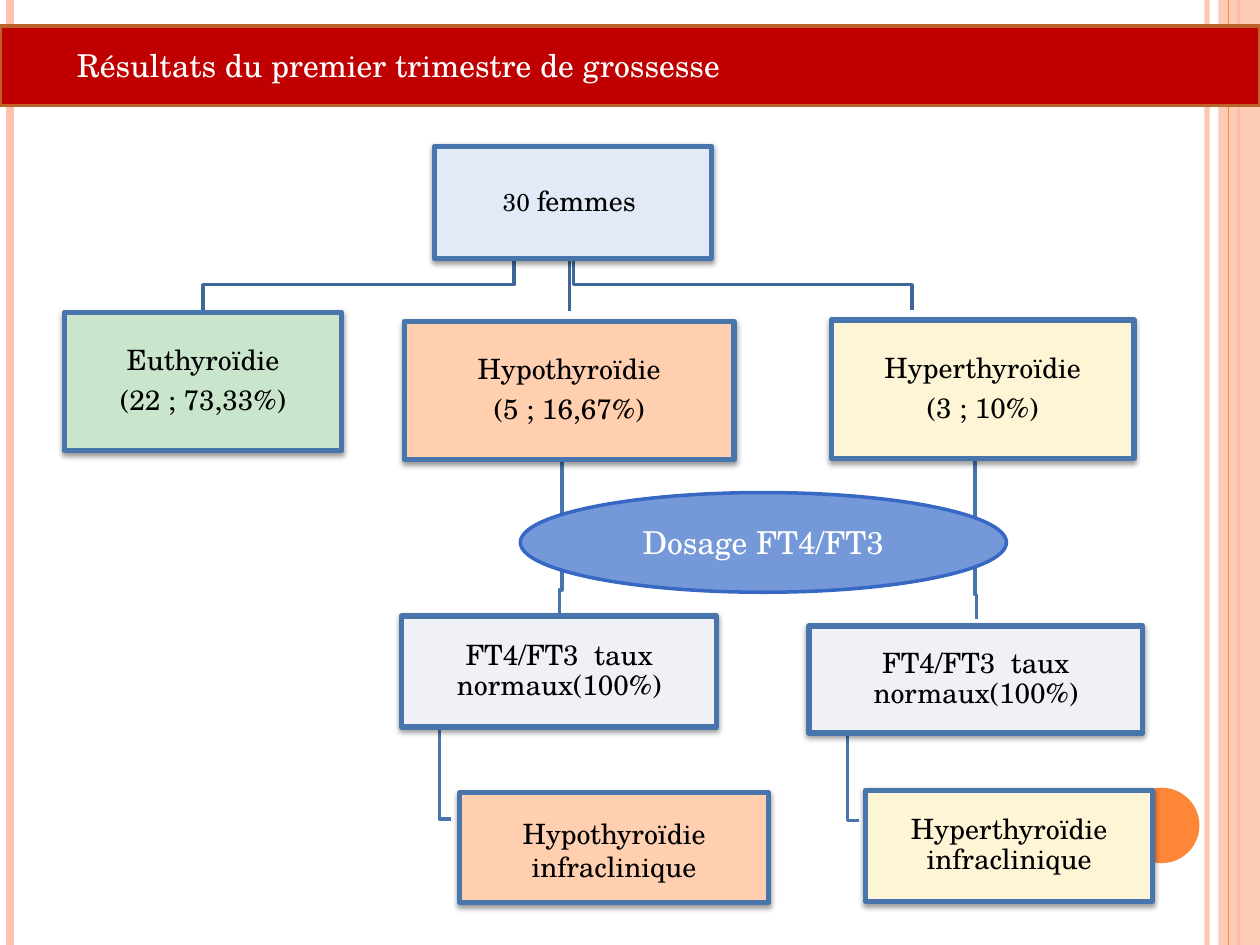
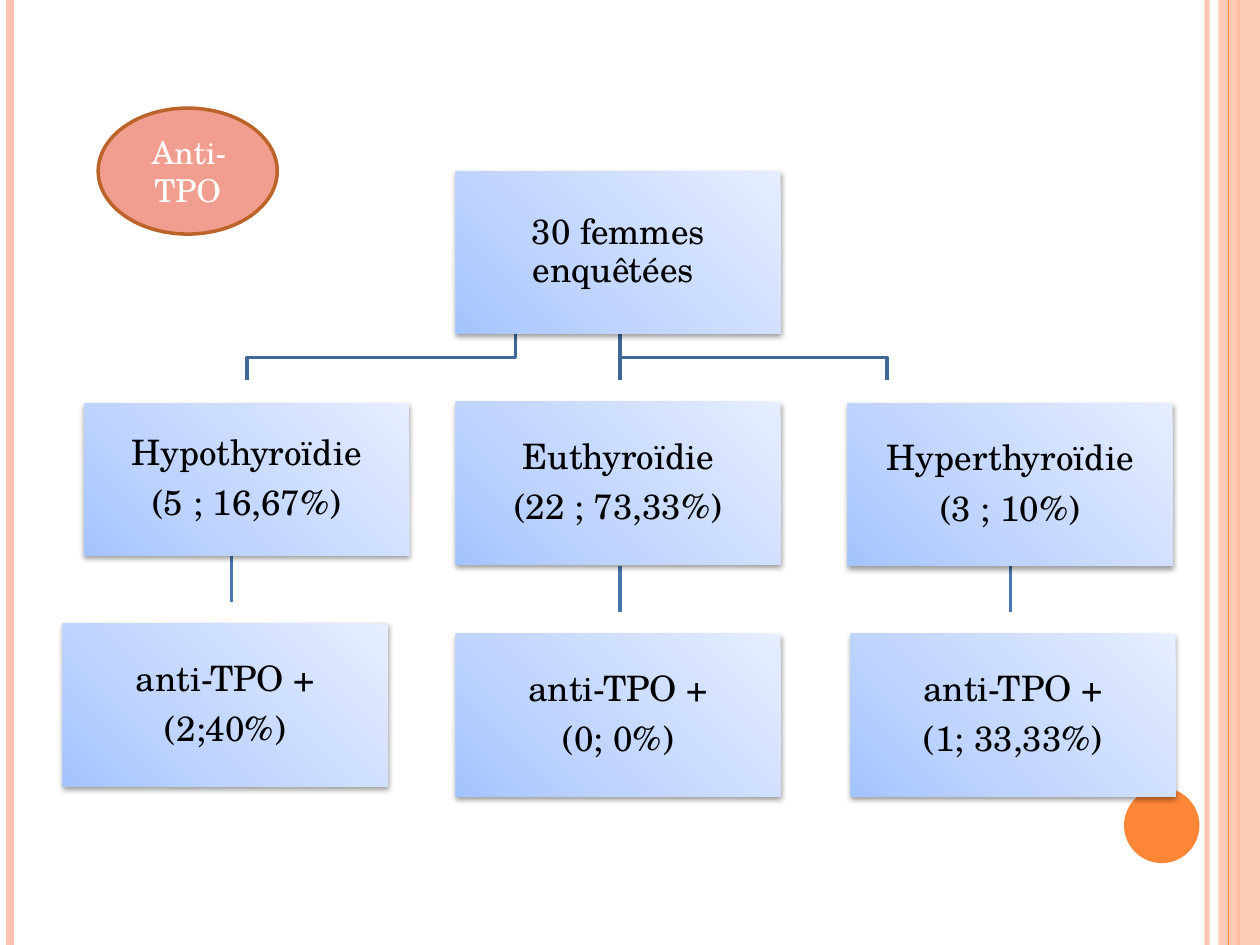
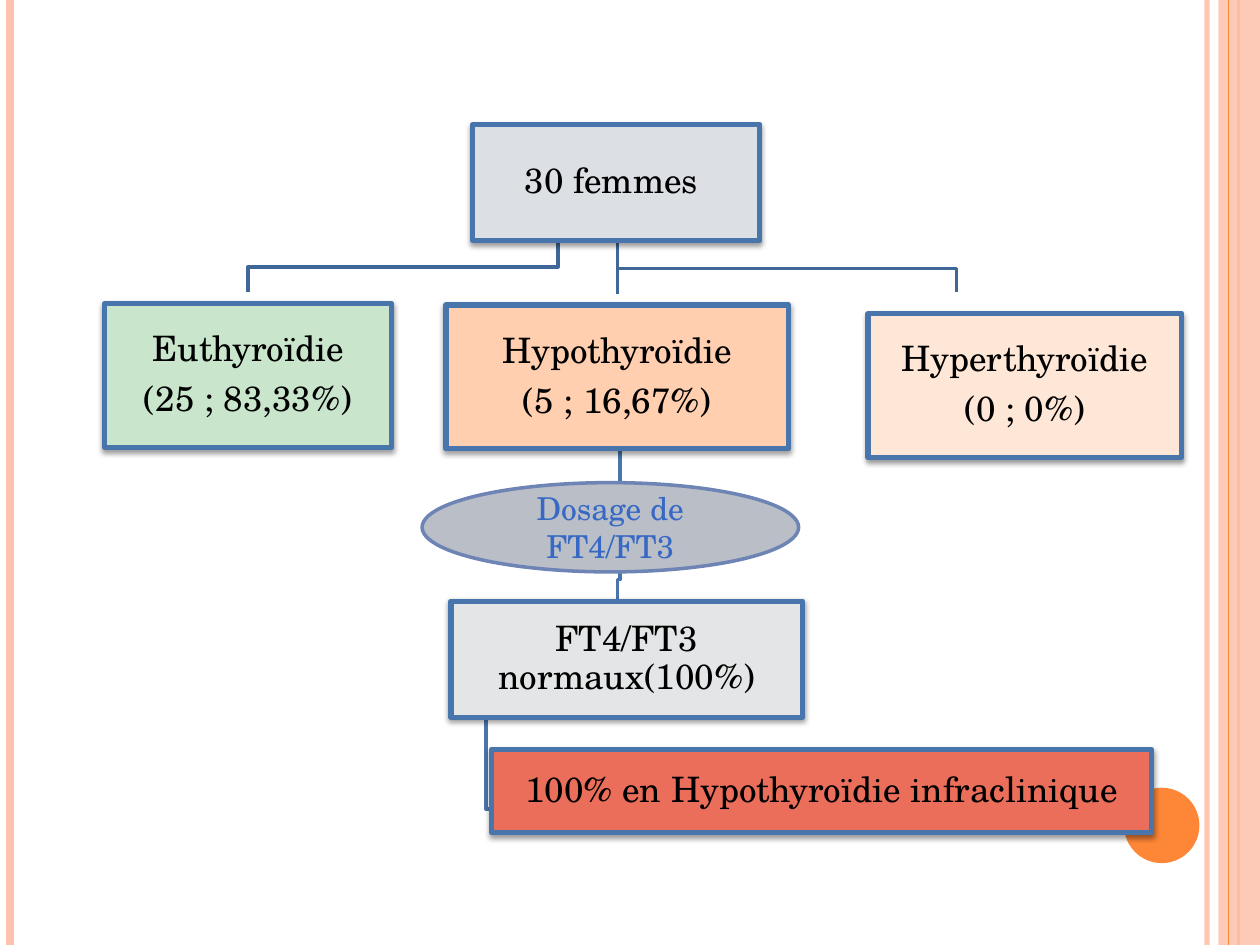
"""Build three slides of flow charts on thyroid results in pregnancy."""
import lxml.etree
import pptx
import pptx.dml.color
import pptx.enum.shapes
import pptx.enum.text
import pptx.oxml
import pptx.oxml.ns
import pptx.util

Cm = pptx.util.Cm
Pt = pptx.util.Pt
qn = pptx.oxml.ns.qn
Kind = pptx.enum.shapes.MSO_SHAPE
Align = pptx.enum.text.PP_ALIGN

WIDTH, HEIGHT = 25.4, 19.05
FONT = "TeX Gyre Schola"
COLORS = {
    "black": "000000", "white": "FFFFFF", "peach": "FEC3AE", "orange": "FE8637",
    "red": "C00000", "rust": "BC6329", "edge": "4875AC", "trunk": "3F6797",
    "pale": "E3EAF7", "green": "C9E5CC", "apricot": "FFCFAF", "cream": "FDF5D5",
    "mist": "EFF1F7", "blue": "7598D9", "royal": "3668C4", "salmon": "F19E91",
    "silver": "DCDFE3", "smoke": "E4E5E6", "coral": "EB6E5A", "blush": "FFE7D7",
    "slate": "B9BEC7", "steel": "6E84B4",
    "deep": "A4C4FF", "mid": "BFD4FF", "light": "E6EEFF",
}
GLOW = (("deep", 0), ("mid", 35), ("light", 100))


class Deck:
    def __init__(self):
        self.prs = pptx.Presentation()
        self.prs.slide_width, self.prs.slide_height = Cm(WIDTH), Cm(HEIGHT)
        self.shapes = None

    def rgb(self, name):
        return pptx.dml.color.RGBColor.from_string(COLORS[name])

    def fade(self, part, alpha):
        for color in part.iter(qn("a:srgbClr")):
            lxml.etree.SubElement(color, qn("a:alpha"), val=str(alpha * 1000))

    def slide(self):
        self.shapes = self.prs.slides.add_slide(self.prs.slide_layouts[6]).shapes
        rule = self.line(24.33, 0, 24.33, HEIGHT, "peach", 3)
        self.fade(rule._element, 93)
        self.line(0.2, 0, 0.2, HEIGHT, "peach", 4.5)
        self.line(24.97, 0, 24.97, HEIGHT, "orange", 1.5)
        strip = self.shape(Kind.RECTANGLE, (24.56, 0, 0.84, HEIGHT), "peach")
        self.fade(strip._element, 87)
        self.line(24.77, 0, 24.77, HEIGHT, "orange", 0.75)
        self.shape(Kind.OVAL, (22.66, 15.88, 1.52, 1.52), "orange")

    def line(self, x1, y1, x2, y2, color, width):
        line = self.shapes.add_connector(
            pptx.enum.shapes.MSO_CONNECTOR.STRAIGHT, Cm(x1), Cm(y1), Cm(x2), Cm(y2))
        line.line.color.rgb = self.rgb(color)
        line.line.width = Pt(width)
        lxml.etree.SubElement(line._element.spPr, qn("a:effectLst"))
        return line

    def link(self, color, x, y, *turns):
        """Draw a path whose turns are y, x, y and so on."""
        if len(turns) == 1:
            self.line(x, y, x, turns[0], color, 2)
            return
        path = self.shapes.build_freeform(Cm(x), Cm(y))
        points = []
        for step, turn in enumerate(turns):
            x, y = (turn, y) if step % 2 else (x, turn)
            points.append((Cm(x), Cm(y)))
        path.add_line_segments(points, close=False)
        shape = path.convert_to_shape()
        shape.fill.background()
        shape.line.color.rgb = self.rgb(color)
        shape.line.width = Pt(2)
        shape.shadow.inherit = False

    def shape(self, kind, place, fill, edge=None, width=2):
        shape = self.shapes.add_shape(kind, *map(Cm, place))
        shape.fill.solid()
        shape.fill.fore_color.rgb = self.rgb(fill)
        if edge:
            shape.line.color.rgb = self.rgb(edge)
            shape.line.width = Pt(width)
        else:
            shape.line.fill.background()
        shape.shadow.inherit = False
        return shape

    def text(self, shape, parts, size, color, align=Align.CENTER):
        frame = shape.text_frame
        frame.word_wrap = True
        for count, part in enumerate(parts):
            para = frame.add_paragraph() if count else frame.paragraphs[0]
            para.alignment = align
            para.font.name = FONT
            para.font.size = Pt(size)
            para.font.color.rgb = self.rgb(color)
            for word, points in [(part, None)] if isinstance(part, str) else part:
                run = para.add_run()
                run.text = word
                if points:
                    run.font.size = Pt(points)
        return frame

    def oval(self, place, fill, edge, words, color="white"):
        shape = self.shape(Kind.OVAL, place, fill, edge)
        frame = self.text(shape, [words], 18, color)
        frame.vertical_anchor = pptx.enum.text.MSO_ANCHOR.MIDDLE

    def box(self, place, fill, size, *parts):
        edge = None if fill == "glow" else "edge"
        shape = self.shape(Kind.RECTANGLE, place, "light" if fill == "glow" else fill, edge, 3)
        if fill == "glow":
            self.glow(shape)
        self.shade(shape)
        frame = self.text(shape, parts, size, "black")
        frame.vertical_anchor = pptx.enum.text.MSO_ANCHOR.MIDDLE
        frame.margin_left = frame.margin_right = Cm(0.03)
        frame.margin_top = frame.margin_bottom = Cm(0.03)
        for para in frame.paragraphs:
            para.line_spacing = 0.9
            para.space_after = Pt(0.35 * size)

    def glow(self, shape):
        stops = "".join(
            f'<a:gs pos="{pos * 1000}"><a:srgbClr val="{COLORS[name]}"/></a:gs>'
            for name, pos in GLOW)
        props = shape._element.spPr
        props.replace(props.find(qn("a:solidFill")), pptx.oxml.parse_xml(
            f'<a:gradFill {pptx.oxml.ns.nsdecls("a")} rotWithShape="1">'
            f'<a:gsLst>{stops}</a:gsLst><a:path path="circle">'
            '<a:fillToRect t="100000" r="100000"/></a:path></a:gradFill>'))

    def shade(self, shape):
        effect = shape._element.spPr.find(qn("a:effectLst"))
        shade = lxml.etree.SubElement(
            effect, qn("a:outerShdw"), blurRad=str(Pt(3.1)), dist=str(Pt(1.6)),
            dir="5400000", rotWithShape="0")
        lxml.etree.SubElement(shade, qn("a:srgbClr"), val=COLORS["black"])
        self.fade(shade, 38)

    def title(self, words):
        self.shape(Kind.RECTANGLE, (0, 0.53, WIDTH, 1.6), "red", "rust")
        label = self.shapes.add_textbox(*map(Cm, (1.3, 0.81, 15.19, 1.02)))
        self.text(label, [words], 18, "white", Align.LEFT)


def first(deck):
    deck.slide()
    deck.link("edge", 17.09, 14.78, 16.54, 17.32)
    deck.link("edge", 19.66, 9.25, 11.99, 19.69, 12.47)
    deck.link("trunk", 11.56, 5.18, 5.74, 18.39, 6.25)
    deck.link("edge", 8.86, 14.68, 16.51, 9.09)
    deck.link("edge", 11.33, 9.27, 11.89, 11.28, 12.4)
    deck.link("trunk", 11.48, 5.18, 6.27)
    deck.link("trunk", 10.36, 5.18, 5.74, 4.09, 6.25)
    normal = "FT4/FT3  taux normaux(100%)"
    deck.box((8.76, 2.95, 5.59, 2.26), "pale", 16, [("30 ", 14), ("femmes ", None)])
    deck.box((1.3, 6.3, 5.59, 2.79), "green", 16, "Euthyroïdie", "(22 ; 73,33%)")
    deck.box((8.15, 6.48, 6.65, 2.79), "apricot", 16, "Hypothyroïdie", "(5 ; 16,67%)")
    deck.box((8.1, 12.42, 6.35, 2.24), "mist", 16, normal)
    deck.box((9.27, 15.98, 6.22, 2.21), "apricot", 16,
             [("Hypothyroïdie", None), (" ", 22), ("infraclinique", None)])
    deck.box((16.76, 6.45, 6.1, 2.79), "cream", 16, "Hyperthyroïdie", "(3 ; 10%)")
    deck.box((16.31, 12.62, 6.73, 2.16), "mist", 16, normal)
    deck.box((17.45, 15.93, 5.79, 2.24), "cream", 16, "Hyperthyroïdie infraclinique")
    deck.oval((10.49, 9.93, 9.8, 2.01), "blue", "royal", "Dosage FT4/FT3")
    deck.title("Résultats du premier trimestre de grossesse")


def second(deck):
    deck.slide()
    deck.link("edge", 20.37, 11.4, 12.34)
    deck.link("trunk", 12.5, 6.73, 7.21, 17.88, 7.67)
    deck.link("edge", 12.5, 11.4, 12.34)
    deck.link("trunk", 12.5, 6.73, 7.67)
    deck.link("edge", 4.67, 11.2, 12.14)
    deck.link("trunk", 10.39, 6.73, 7.21, 4.98, 7.67)
    wide, tall = 6.55, 3.28
    for x, y, high, *parts in (
        (9.19, 3.45, tall, "30 femmes enquêtées "),
        (1.7, 8.13, 3.07, "Hypothyroïdie", "(5 ; 16,67%)"),
        (1.27, 12.57, tall, "anti-TPO +", "(2;40%)"),
        (9.19, 8.1, tall, "Euthyroïdie", "(22 ; 73,33%)"),
        (9.19, 12.78, tall, "anti-TPO +", "(0; 0%)"),
        (17.09, 8.13, tall, "Hyperthyroïdie", "(3 ; 10%)"),
        (17.15, 12.78, tall, "anti-TPO +", "(1; 33,33%)"),
    ):
        deck.box((x, y, wide, high), "glow", 20, *parts)
    deck.oval((1.98, 2.18, 3.61, 2.54), "salmon", "rust", "Anti-TPO")


def third(deck):
    deck.slide()
    deck.link("trunk", 12.45, 4.85, 5.41, 19.28, 5.89)
    deck.link("edge", 9.8, 14.45, 16.31, 10.03)
    deck.link("edge", 12.5, 9.07, 11.68, 12.45, 12.19)
    deck.link("trunk", 12.45, 4.85, 5.92)
    deck.link("trunk", 11.25, 4.85, 5.38, 5, 5.89)
    deck.box((9.53, 2.51, 5.79, 2.34), "silver", 20, "30 femmes ")
    deck.box((2.11, 6.12, 5.79, 2.9), "green", 20, "Euthyroïdie", "(25 ; 83,33%)")
    deck.box((8.99, 6.15, 6.91, 2.9), "apricot", 20, "Hypothyroïdie", "(5 ; 16,67%)")
    deck.box((9.09, 12.12, 7.09, 2.34), "smoke", 20, "FT4/FT3 normaux(100%)")
    deck.box((9.91, 15.11, 13.31, 1.68), "coral", 20, "100% en Hypothyroïdie infraclinique")
    deck.box((17.5, 6.32, 6.32, 2.9), "blush", 20, "Hyperthyroïdie", "(0 ; 0%)")
    deck.oval((8.51, 9.73, 7.59, 1.8), "slate", "steel", "Dosage de FT4/FT3", "royal")


def main():
    deck = Deck()
    for build in (first, second, third):
        build(deck)
    deck.prs.save("out.pptx")


if __name__ == "__main__":
    main()
